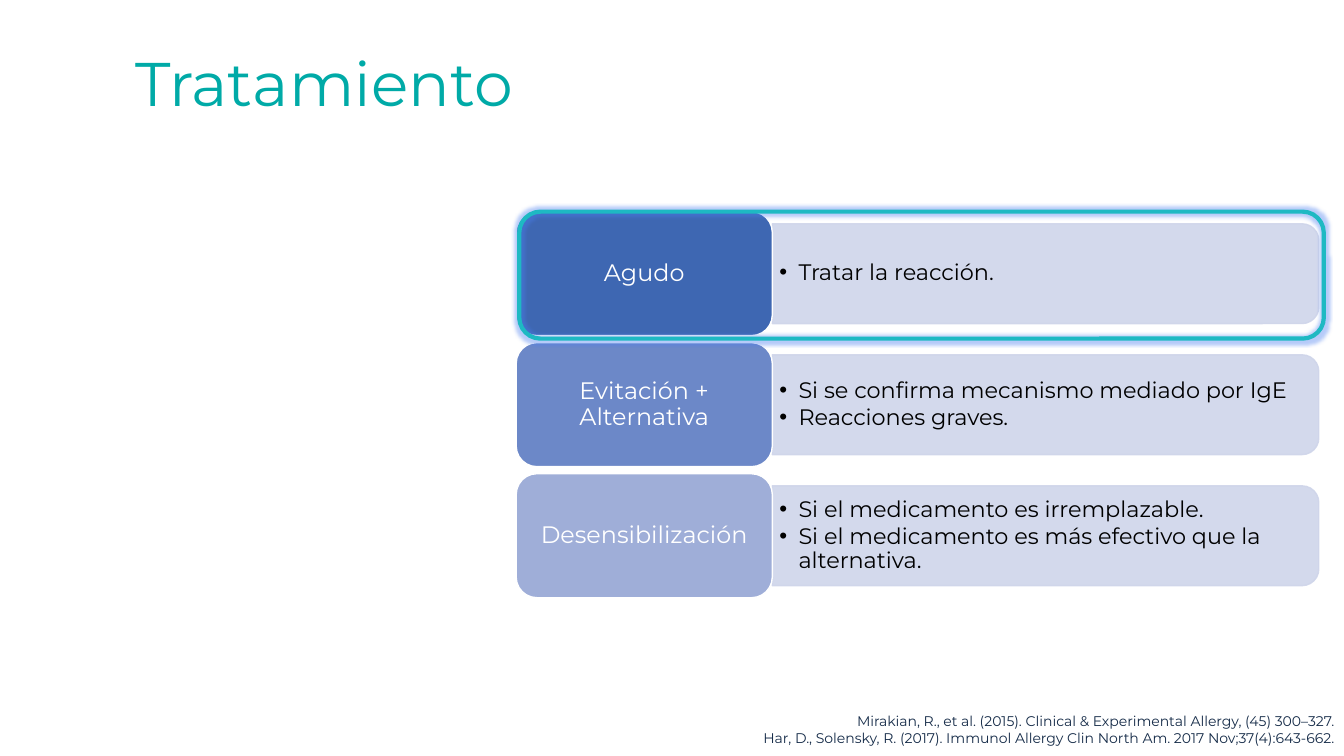
import pptx
import pptx.dml.color
import pptx.enum.shapes
import pptx.enum.text
import pptx.oxml.ns
import pptx.util
from lxml import etree

Inches = pptx.util.Inches
Pt = pptx.util.Pt
SHAPE = pptx.enum.shapes.MSO_SHAPE
ALIGN = pptx.enum.text.PP_ALIGN
ANCHOR = pptx.enum.text.MSO_ANCHOR
qn = pptx.oxml.ns.qn


def color(hex_value):
    return pptx.dml.color.RGBColor.from_string(hex_value)


def add_alpha(color_element, percent):
    etree.SubElement(color_element, qn("a:alpha"), val=str(percent * 1000))


class TreatmentSlide:
    FONT = "Montserrat"

    def __init__(self, slide):
        self.slide = slide

    def fill_text(self, frame, paragraphs, size, ink, align=ALIGN.LEFT, insets=(0.1, 0.05),
                  anchor=ANCHOR.MIDDLE, bullet_indent=None, line_spacing=0.9, space_after=0):
        """Fill a text frame with equally formatted paragraphs."""
        side, end = map(Inches, insets)
        frame_format = {"word_wrap": True, "vertical_anchor": anchor,
                        "margin_left": side, "margin_right": side,
                        "margin_top": end, "margin_bottom": end}
        for name, value in frame_format.items():
            setattr(frame, name, value)
        paragraph_format = {"alignment": align, "line_spacing": line_spacing,
                            "space_after": Pt(space_after)}
        font_format = {"name": self.FONT, "size": Pt(size)}
        for index, text in enumerate(paragraphs):
            paragraph = frame.paragraphs[0] if index == 0 else frame.add_paragraph()
            for name, value in paragraph_format.items():
                setattr(paragraph, name, value)
            if bullet_indent:
                properties = paragraph._p.get_or_add_pPr()
                properties.set("marL", str(Inches(bullet_indent)))
                properties.set("indent", str(-Inches(bullet_indent)))
                etree.SubElement(properties, qn("a:buFont"), typeface="Arial")
                etree.SubElement(properties, qn("a:buChar"), char="•")
            run = paragraph.add_run()
            run.text = text
            for name, value in font_format.items():
                setattr(run.font, name, value)
            run.font.color.rgb = color(ink)

    def text(self, box, paragraphs, size, ink, **style):
        textbox = self.slide.shapes.add_textbox(*map(Inches, box))
        self.fill_text(textbox.text_frame, paragraphs, size, ink, **style)

    def shape(self, kind, box, fill, line, width=1):
        shape = self.slide.shapes.add_shape(kind, *map(Inches, box))
        shape.shadow.inherit = False
        if fill:
            shape.fill.solid()
            shape.fill.fore_color.rgb = color(fill)
        else:
            shape.fill.background()
        shape.line.color.rgb = color(line)
        shape.line.width = Pt(width)
        return shape

    def panel(self, left, top, width, height, fill, opacity):
        """Bar with its right corners rounded: an upright shape turned a quarter."""
        box = (left + (width - height) / 2, top + (height - width) / 2, height, width)
        bar = self.shape(SHAPE.ROUND_2_SAME_RECTANGLE, box, fill, fill)
        bar.rotation = 90
        for tint in bar._element.spPr.iter(qn("a:srgbClr")):
            add_alpha(tint, opacity)

    def label(self, box, text, fill):
        tile = self.shape(SHAPE.ROUNDED_RECTANGLE, box, fill, "FFFFFF")
        self.fill_text(tile.text_frame, [text], 17, "FFFFFF", align=ALIGN.CENTER,
                       insets=(0.07, 0.04))

    def highlight(self, box, line, halo):
        frame = self.shape(SHAPE.ROUNDED_RECTANGLE, box, None, line, 3)
        effects = frame._element.spPr.find(qn("a:effectLst"))
        glow = etree.SubElement(effects, qn("a:glow"), rad=str(Pt(5)))
        add_alpha(etree.SubElement(glow, qn("a:srgbClr"), val=halo), 40)


STEPS = [
    ("Agudo", "3E67B2", ["Tratar la reacción."]),
    ("Evitación + Alternativa", "6C88C8",
     ["Si se confirma mecanismo mediado por IgE", "Reacciones graves."]),
    ("Desensibilización", "9FAED8",
     ["Si el medicamento es irremplazable.",
      "Si el medicamento es más efectivo que la alternativa."]),
]
REFERENCES = [
    "Mirakian, R., et al. (2015). Clinical & Experimental Allergy, (45) 300–327.",
    "Har, D., Solensky, R. (2017). Immunol Allergy Clin North Am. 2017 Nov;37(4):643-662.",
]


def main():
    deck = pptx.Presentation()
    deck.slide_width, deck.slide_height = Inches(13.33), Inches(7.5)
    page = TreatmentSlide(deck.slides.add_slide(deck.slide_layouts[6]))

    # Title
    page.text((0.92, 0.13, 4.59, 1.45), ["Tratamiento"], 44, "00AAA7", align=ALIGN.CENTER)

    # Treatment steps
    first_top, pitch = 2.1, 1.3
    for row, (step, fill, details) in enumerate(STEPS):
        top = first_top + row * pitch
        page.panel(7.66, top + 0.12, 5.42, 0.99, "CFD5EA", 90)
        page.text((7.66, top + 0.17, 5.37, 0.89), details, 16, "000000",
                  insets=(0.07, 0.03), bullet_indent=0.19, space_after=2.4)
        page.label((5.12, top, 2.54, 1.23), step, fill)

    # References
    page.text((0, 7.02, 13.33, 0.44), REFERENCES, 10, "152B48", align=ALIGN.RIGHT,
              anchor=ANCHOR.TOP, line_spacing=1.0)

    # Highlight of the first step
    page.highlight((5.15, first_top, 7.98, 1.26), "1EB9C3", "4A7FF0")

    deck.save("out.pptx")


if __name__ == "__main__":
    main()
